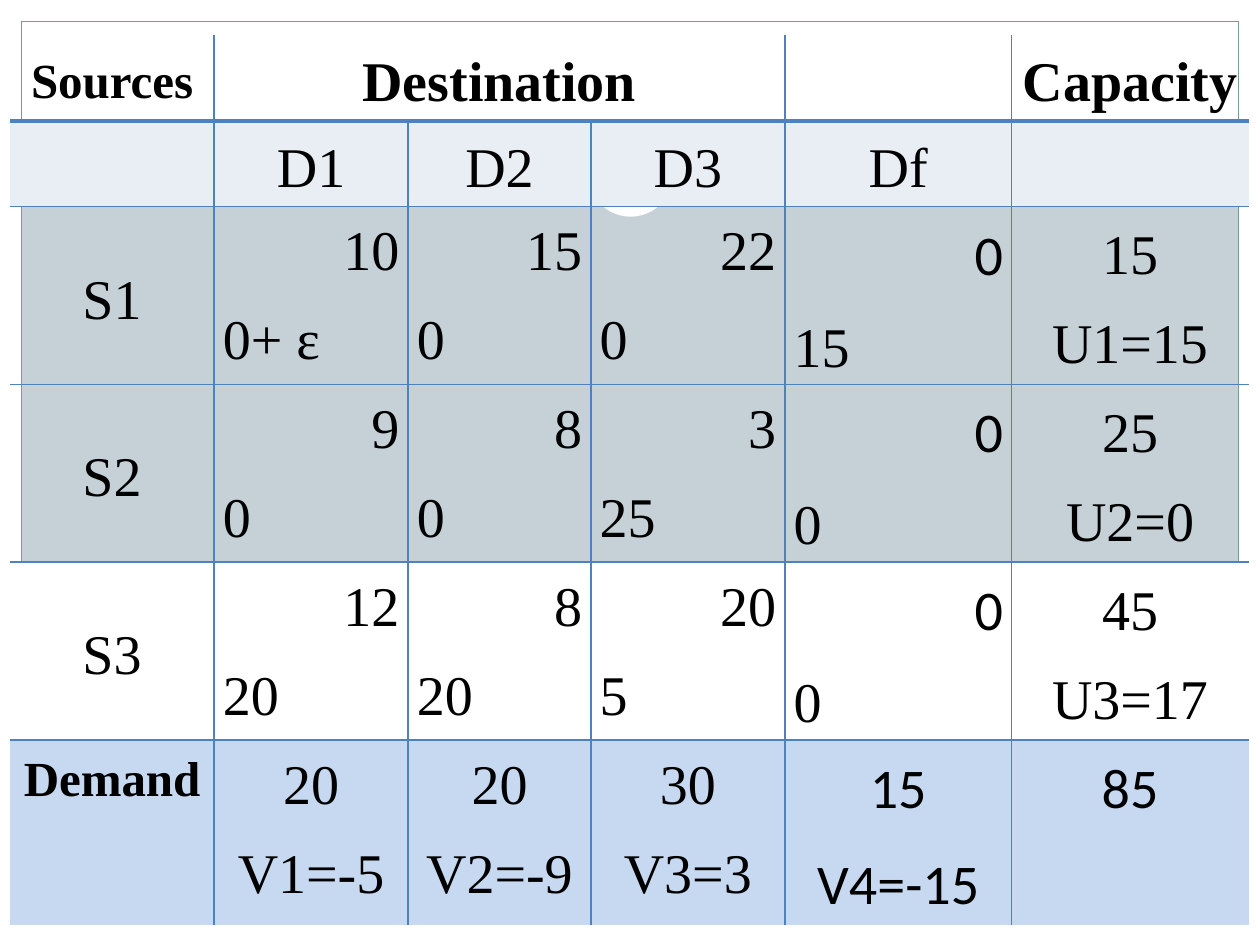
from lxml import etree
from pptx import Presentation
from pptx.dml.color import RGBColor
from pptx.enum.shapes import MSO_SHAPE
from pptx.enum.text import MSO_ANCHOR, PP_ALIGN
from pptx.oxml.ns import qn
from pptx.util import Inches, Pt

LEFT, CENTER, RIGHT = PP_ALIGN.LEFT, PP_ALIGN.CENTER, PP_ALIGN.RIGHT
TOP, MIDDLE = MSO_ANCHOR.TOP, MSO_ANCHOR.MIDDLE
RECT, OVAL = MSO_SHAPE.RECTANGLE, MSO_SHAPE.OVAL
SERIF, SANS = "Times New Roman", "Calibri"
GRID = "4F81BD"
NO_STYLE = "{2D5ABB26-0587-4C30-8999-92F81FD0307C}"

# Content: each cell is a tuple of paragraphs
ROWS = [
    [("Sources",), ("Destination",), (), (), (), ("Capacity",)],
    [(), ("D1",), ("D2",), ("D3",), ("Df",), ()],
    [("S1",), ("10", "0+ ε"), ("15", "0"), ("22", "0"), ("0", "15"), ("15", "U1=15")],
    [("S2",), ("9", "0"), ("8", "0"), ("3", "25"), ("0", "0"), ("25", "U2=0")],
    [("S3",), ("12", "20"), ("8", "20"), ("20", "5"), ("0", "0"), ("45", "U3=17")],
    [("Demand",), ("20", "V1=-5"), ("20", "V2=-9"), ("30", "V3=3"),
     ("15", "V4=-15"), ("85",)],
]
COL_WIDTHS = [1.62, 1.54, 1.45, 1.54, 1.8, 1.88]
ROW_HEIGHTS = [0.68, 0.68, 1.4, 1.4, 1.4, 0.94]
ROW_FILLS = [None, "E9EDF4", None, None, "FFFFFF", "C6D9F1"]
CELL_FILLS = {(2, 1): "C5D1D7", (2, 4): "C5D1D7", (3, 3): "C5D1D7"}
LAST_ROW, LAST_COL, DF_COL = len(ROWS) - 1, len(COL_WIDTHS) - 1, 4

# Backdrop: shape, position, fill, line
BACKDROP = [
    (RECT, (0, 7.33, 10, 0.17), "FFFFFF", None),
    (RECT, (0, 0, 10, 1.52), "FFFFFF", None),
    (RECT, (0, 0, 0.17, 7.5), "FFFFFF", None),
    (RECT, (9.83, 0, 0.17, 7.5), "FFFFFF", None),
    (RECT, (0.17, 0.17, 9.66, 7.16), None, "7C999A"),
    (OVAL, (4.67, 1.05, 0.67, 0.67), "FFFFFF", None),
]


def rgb(value):
    return RGBColor.from_string(value)


def set_fill(fill, color):
    if color:
        fill.solid()
        fill.fore_color.rgb = rgb(color)
    else:
        fill.background()


def add_backdrop(slide, kind, box, fill, line):
    sp = slide.shapes.add_shape(kind, *map(Inches, box))
    sp.shadow.inherit = False
    set_fill(sp.fill, fill)
    set_fill(sp.line.fill, line)
    if line:
        sp.line.width = Pt(0.75)


def write(p, text, size=32, font=SERIF, bold=False, align=CENTER):
    p.alignment = align
    p.line_spacing = 1.15
    p.space_after = Pt(10)
    r = p.add_run()
    r.text = text
    r.font.size, r.font.name, r.font.bold = Pt(size), font, bold
    r.font.color.rgb = rgb("000000")


def set_borders(cell, widths):
    """Edges go before the fill, in the order left, right, top, bottom."""
    tcPr = cell._tc.get_or_add_tcPr()
    for i, (side, width) in enumerate(zip("LRTB", widths)):
        ln = etree.Element(qn(f"a:ln{side}"), w=str(int(Pt(width))))
        if width:
            solid = etree.SubElement(ln, qn("a:solidFill"))
            etree.SubElement(solid, qn("a:srgbClr"), val=GRID)
        else:
            etree.SubElement(ln, qn("a:noFill"))
        tcPr.insert(i, ln)


def format_cell(cell, row, col, texts):
    costs = 2 <= row < LAST_ROW and 1 <= col <= DF_COL
    cell.vertical_anchor = TOP if costs or row == LAST_ROW else MIDDLE
    cell.margin_left = cell.margin_right = Inches(0.07)
    cell.margin_top = cell.margin_bottom = Inches(0.04)
    set_fill(cell.fill, CELL_FILLS.get((row, col), ROW_FILLS[row]))

    # Inner grid only, with a heavier rule under the header
    last = col + (cell.span_width if cell.is_merge_origin else 1) - 1
    set_borders(cell, [
        1 if col else 0,
        1 if last < LAST_COL else 0,
        {0: 0, 1: 2.25}.get(row, 1),
        {0: 2.25, LAST_ROW: 0}.get(row, 1),
    ])

    tf = cell.text_frame
    for i, text in enumerate(texts):
        p = tf.add_paragraph() if i else tf.paragraphs[0]
        sans = (costs and col == DF_COL and i == 0) or (row == LAST_ROW and col >= DF_COL)
        write(p, text,
              size=28 if col == 0 and row in (0, LAST_ROW) else 32,
              font=SANS if sans else SERIF,
              bold=row == 0 or (row == LAST_ROW and col == 0),
              align=(RIGHT, LEFT)[i] if costs else CENTER)


def main():
    prs = Presentation()
    prs.slide_width, prs.slide_height = Inches(10), Inches(7.5)
    slide = prs.slides.add_slide(prs.slide_layouts[6])
    set_fill(slide.background.fill, "C5D1D7")
    for item in BACKDROP:
        add_backdrop(slide, *item)

    # Transportation table
    frame = slide.shapes.add_table(len(ROWS), len(COL_WIDTHS), Inches(0.08), Inches(0.28),
                                   Inches(sum(COL_WIDTHS)), Inches(sum(ROW_HEIGHTS)))
    table = frame.table
    table.first_row = table.horz_banding = False
    table._tbl.tblPr.find(qn("a:tableStyleId")).text = NO_STYLE
    for column, width in zip(table.columns, COL_WIDTHS):
        column.width = Inches(width)
    for row, height in zip(table.rows, ROW_HEIGHTS):
        row.height = Inches(height)
    table.cell(0, 1).merge(table.cell(0, 3))
    for r, texts in enumerate(ROWS):
        for c, text in enumerate(texts):
            cell = table.cell(r, c)
            if not cell.is_spanned:
                format_cell(cell, r, c, text)

    prs.save("out.pptx")


if __name__ == "__main__":
    main()
